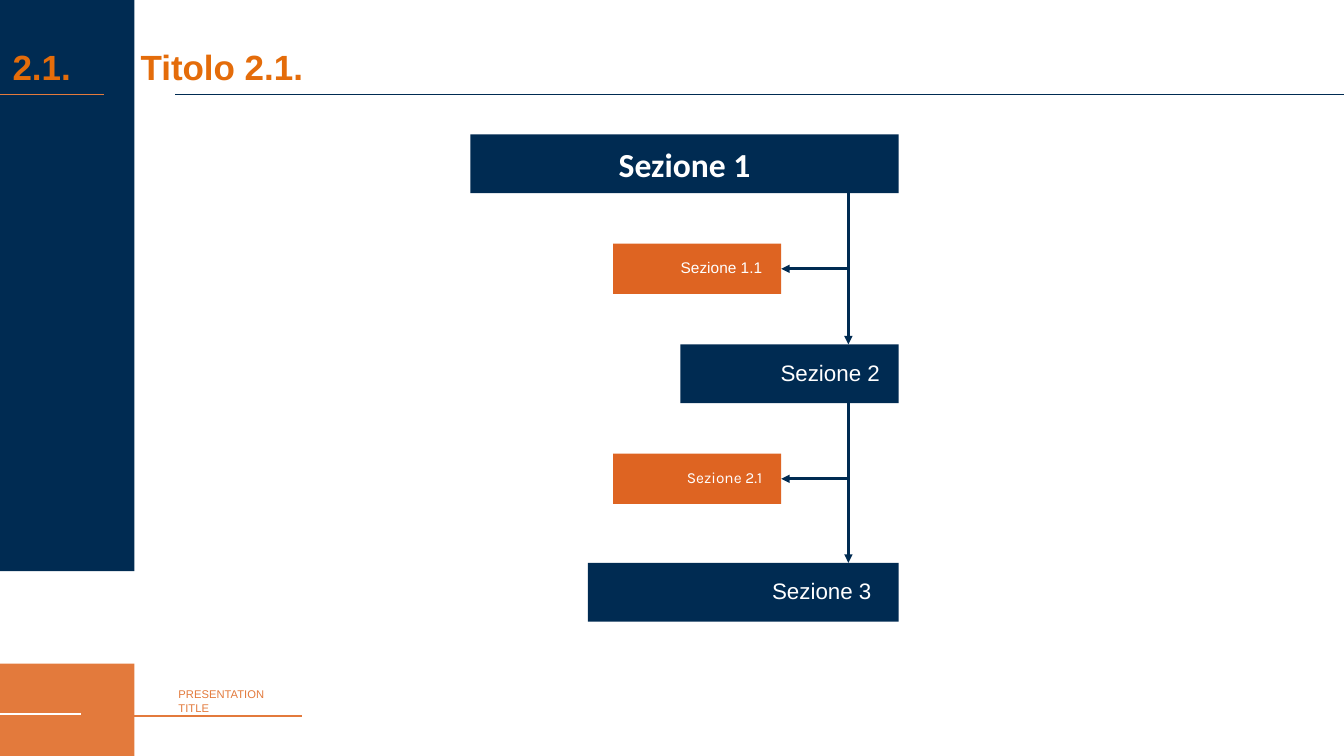
from collections import namedtuple
from dataclasses import dataclass

from pptx import Presentation
from pptx.dml.color import RGBColor
from pptx.enum.shapes import MSO_CONNECTOR as Connector, MSO_SHAPE as Shape
from pptx.enum.text import MSO_ANCHOR as Anchor, PP_ALIGN as Align
from pptx.oxml.ns import qn
from pptx.util import Emu, Pt
from lxml.etree import SubElement

Box = namedtuple("Box", "left top width height")
Section = namedtuple("Section", "text left top")


@dataclass(frozen=True)
class Theme:
    """Colours, fonts and type sizes of the deck."""
    navy: str = "002B52"
    orange: str = "E37A3C"
    rust: str = "DE6422"
    amber: str = "E46C0A"
    white: str = "FFFFFF"
    sans: str = "Arial"
    heading: str = "Calibri"
    accent: str = "Karla"
    title_size: int = 25
    heading_size: int = 24
    section_size: int = 16
    detail_size: int = 11
    footer_size: int = 8


THEME = Theme()


def px(length):
    """Turn pixels into EMU."""
    return Emu(length * 9525)


def style_font(para, face, size, colour, bold=False):
    """Set the font of a whole paragraph."""
    font = para.font
    font.name, font.size, font.bold = face, Pt(size), bold
    font.color.rgb = RGBColor.from_string(colour)


def add_block(page, box, colour):
    """Draw a plain filled rectangle."""
    block = page.shapes.add_shape(Shape.RECTANGLE, *map(px, box))
    block.shadow.inherit = False
    block.fill.solid()
    block.fill.fore_color.rgb = RGBColor.from_string(colour)
    block.line.fill.background()
    return block


def add_line(page, start, end, colour, width=1, arrow=False):
    """Draw a straight line, with an arrowhead at its end if asked."""
    line = page.shapes.add_connector(Connector.STRAIGHT, *map(px, start + end))
    line.line.color.rgb = RGBColor.from_string(colour)
    line.line.width = Pt(width)
    if arrow:
        SubElement(line.line._get_or_add_ln(), qn("a:tailEnd"), type="triangle")
    SubElement(line._element.spPr, qn("a:effectLst"))
    return line


def add_text_frame(page, box, inset_x, inset_y):
    """Add a wrapping text box and return its frame."""
    frame = page.shapes.add_textbox(*map(px, box)).text_frame
    frame.word_wrap = True
    frame.margin_left = frame.margin_right = px(inset_x)
    frame.margin_top = frame.margin_bottom = px(inset_y)
    return frame


def draw_sidebar(page, box):
    """Draw the navy band and the orange corner block with its rule."""
    add_block(page, Box(box.left, box.top, box.width, 544), THEME.navy)
    corner_top = box.top + 632
    add_block(page, Box(box.left, corner_top, box.width, 88), THEME.orange)
    rule_y = corner_top + 48
    add_line(page, (box.left, rule_y), (box.left + 77, rule_y), THEME.white)


def draw_footer(page, box):
    """Write the presentation title above its orange rule."""
    frame = add_text_frame(page, Box(box.left + 40, box.top, 305, box.height), 10, 5)
    frame.text = "PRESENTATION\nTITLE"
    for para in frame.paragraphs:
        style_font(para, THEME.sans, THEME.footer_size, THEME.orange)
    bottom = box.top + box.height
    add_line(page, (box.left, bottom), (box.left + box.width, bottom), THEME.orange)


def draw_header(page, box):
    """Write the numbered title and draw the two rules under it."""
    rule_y = box.top + box.height
    add_line(page, (box.left, rule_y), (box.left + 99, rule_y), THEME.orange)
    add_line(page, (box.left + 167, rule_y), (box.left + box.width, rule_y), THEME.navy)
    frame = add_text_frame(page, Box(box.left + 7, box.top, 1164, 48), 5, 5)
    para = frame.paragraphs[0]
    para.text = "2.1.\tTitolo 2.1."
    style_font(para, THEME.sans, THEME.title_size, THEME.amber, True)
    tabs = SubElement(para._p.get_or_add_pPr(), qn("a:tabLst"))
    tabs.getparent().insert(0, tabs)
    SubElement(tabs, qn("a:tab"), pos=str(px(122)), algn="l")


def add_section(page, box, text, colour, face, size, inset=18):
    """Draw a section box with its right-aligned label."""
    block = add_block(page, box, colour)
    frame = block.text_frame
    frame.word_wrap = True
    frame.vertical_anchor = Anchor.MIDDLE
    frame.margin_right = px(inset)
    frame.margin_top, frame.margin_bottom = px(2), px(5)
    para = frame.paragraphs[0]
    para.text, para.alignment = text, Align.RIGHT
    style_font(para, face, size, THEME.white)
    return block


def draw_flow(page, box):
    """Stack the sections on the right edge and link them by a trunk."""
    right, trunk_x = box.left + box.width, box.left + box.width - 48
    height, detail = 56, Box(box.left + 136, box.top, 160, 48)

    first = add_block(page, Box(box.left, box.top, box.width, height), THEME.navy)
    first.text_frame.vertical_anchor = Anchor.MIDDLE
    para = first.text_frame.paragraphs[0]
    para.text, para.alignment = "Sezione 1", Align.CENTER
    para.space_before = Pt(5)
    style_font(para, THEME.heading, THEME.heading_size, THEME.white, True)

    upper = box.top
    for name, left, top, inset in (("Sezione 2", 200, 200, 18),
                                   ("Sezione 3", 112, 408, 26)):
        place = Box(box.left + left, box.top + top, box.width - left, height)
        add_section(page, place, name, THEME.navy, THEME.sans, THEME.section_size, inset)
        add_line(page, (trunk_x, upper + height), (trunk_x, place.top),
                 THEME.navy, 2, arrow=True)
        upper = place.top

    for name, top, face in (("Sezione 1.1", 104, THEME.sans),
                            ("Sezione 2.1", 304, THEME.accent)):
        place = detail._replace(top=box.top + top)
        block = add_section(page, place, name, THEME.rust, face, THEME.detail_size)
        middle = place.top + place.height // 2
        branch = add_line(page, (trunk_x, middle), (place.left + place.width, middle),
                          THEME.navy, 2, arrow=True)
        branch.end_connect(block, 3)


def main():
    """Build the one-slide deck."""
    deck = Presentation()
    deck.slide_width, deck.slide_height = px(1280), px(720)
    page = deck.slides.add_slide(deck.slide_layouts[6])
    draw_sidebar(page, Box(0, 0, 128, 720))
    draw_footer(page, Box(120, 650, 168, 32))
    draw_header(page, Box(0, 38, 1280, 52))
    draw_flow(page, Box(448, 128, 408, 464))
    deck.save("out.pptx")


if __name__ == "__main__":
    main()
